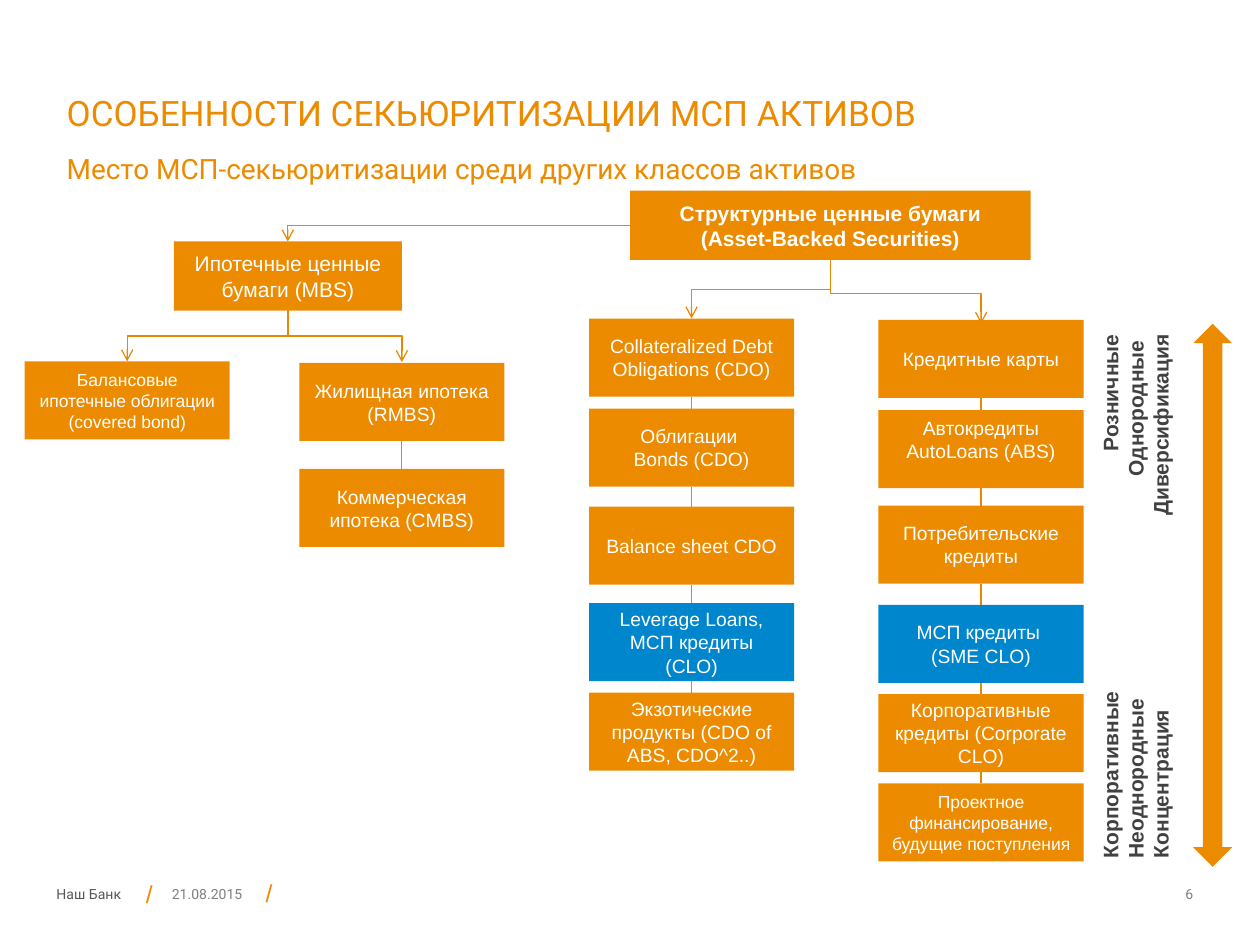
import pptx
import pptx.util
import pptx.dml.color
import pptx.enum.shapes
import pptx.enum.text
import pptx.oxml
import pptx.oxml.ns

Pt = pptx.util.Pt
qn = pptx.oxml.ns.qn
color = pptx.dml.color.RGBColor.from_string
Shape = pptx.enum.shapes.MSO_SHAPE
Connector = pptx.enum.shapes.MSO_CONNECTOR
Align = pptx.enum.text.PP_ALIGN
Anchor = pptx.enum.text.MSO_ANCHOR

ORANGE, BLUE, WHITE, DARK, GRAY = "ED8B00", "0086CD", "FFFFFF", "414141", "7F7F7F"
LINE = "E88800"
BOX_W, BOX_H = 117.2, 44.6
HEAD_H = 39.6

deck = pptx.Presentation()
deck.slide_width, deck.slide_height = Pt(720), Pt(540)
slide = deck.slides.add_slide(deck.slide_layouts[6])
shapes = slide.shapes


def write(target, text, size, ink, font="Arial", bold=False, align=Align.LEFT, anchor=Anchor.TOP):
    frame = target.text_frame
    frame.text = text
    frame.word_wrap = True
    frame.vertical_anchor = anchor
    for paragraph in frame.paragraphs:
        paragraph.alignment = align
        for run in paragraph.runs:
            run.font.name = font
            run.font.size = Pt(size)
            run.font.bold = bold
            run.font.color.rgb = color(ink)


def link(kind, x1, y1, x2, y2, arrow=False):
    connector = shapes.add_connector(kind, Pt(x1), Pt(y1), Pt(x2), Pt(y2))
    connector.line.color.rgb = color(LINE)
    connector.line.width = Pt(0.75)
    properties = connector._element.spPr
    if arrow:
        tail = pptx.oxml.parse_xml(
            '<a:tailEnd xmlns:a="http://schemas.openxmlformats.org/drawingml/2006/main" type="arrow"/>')
        connector.line._get_or_add_ln().append(tail)
    properties.append(properties.makeelement(qn("a:effectLst"), {}))
    return properties


labels = [
    (25.2, 502.4, 96.5, 17.3, "Наш Банк", 8, "575757", "Roboto", Align.LEFT, Anchor.MIDDLE),
    (76.3, 499, 15.8, 24.5, "/", 14, ORANGE, "Arial", Align.LEFT, Anchor.TOP),
    (144.7, 498.2, 15.8, 24.5, "/", 14, ORANGE, "Arial", Align.LEFT, Anchor.TOP),
    (84.2, 502.4, 68.4, 17.3, "21.08.2015", 8, GRAY, "Roboto", Align.CENTER, Anchor.MIDDLE),
    (626.4, 502.4, 62.6, 17.3, "6", 8, GRAY, "Roboto", Align.RIGHT, Anchor.MIDDLE),
    (31, 82.8, 658, 23, "Место МСП-секьюритизации среди других классов активов",
     16, ORANGE, "Roboto", Align.LEFT, Anchor.TOP),
    (31, 49, 658, 56.9, "ОСОБЕННОСТИ СЕКЬЮРИТИЗАЦИИ МСП АКТИВОВ",
     20, ORANGE, "Roboto", Align.LEFT, Anchor.TOP),
]
for x, y, w, h, text, size, ink, font, align, anchor in labels:
    label = shapes.add_textbox(Pt(x), Pt(y), Pt(w), Pt(h))
    write(label, text, size, ink, font, align=align, anchor=anchor)

scale = shapes.add_shape(Shape.UP_DOWN_ARROW, Pt(681.8), Pt(185), Pt(22.3), Pt(310.3))
scale.shadow.inherit = False
scale.fill.solid()
scale.fill.fore_color.rgb = color(ORANGE)
scale.line.fill.background()

for y, h, text, align in [
    (184.1, 128.9, "Розничные\nОднородные \nДиверсификация", Align.RIGHT),
    (385.5, 112, "Корпоративные\nНеоднородные Концентрация", Align.LEFT),
]:
    trait = shapes.add_textbox(Pt(623.5), Pt(y), Pt(58.3), Pt(h))
    write(trait, text, 12, DARK, bold=True, align=align)
    trait.text_frame._txBody.bodyPr.set("vert", "vert270")

boxes = [
    (360, 109, 229, HEAD_H, "Структурные ценные бумаги (Asset-Backed Securities)", 12, ORANGE),
    (99.4, 138, 130.3, HEAD_H, "Ипотечные ценные бумаги (MBS)", 12, ORANGE),
]
columns = [
    (14.1, [(206.5, "Балансовые ипотечные облигации (covered bond)", 10, ORANGE)]),
    (171, [
        (207.4, "Жилищная ипотека (RMBS)", 11, ORANGE),
        (268, "Коммерческая ипотека (СMBS)", 11, ORANGE),
    ]),
    (336.6, [
        (182, "Collateralized Debt Obligations (CDO)", 11, ORANGE),
        (233.5, "Облигации \nBonds (CDO)", 11, ORANGE),
        (289.5, "Balance sheet CDO", 11, ORANGE),
        (344.7, "Leverage Loans, МСП кредиты (CLO)", 11, BLUE),
        (395.8, "Экзотические продукты (CDO of ABS, CDO^2..)", 11, ORANGE),
    ]),
    (502, [
        (182.8, "Кредитные карты", 11, ORANGE),
        (234.3, "Автокредиты\nAutoLoans (ABS)", 11, ORANGE),
        (288.9, "Потребительские кредиты", 11, ORANGE),
        (345.6, "МСП кредиты \v(SME CLO)", 11, BLUE),
        (396.6, "Корпоративные кредиты (Corporate CLO)", 11, ORANGE),
        (447.6, "Проектное финансирование, будущие поступления ", 10, ORANGE),
    ]),
]
for x, members in columns:
    boxes += [(x, y, BOX_W, BOX_H, text, size, fill) for y, text, size, fill in members]

for x, y, w, h, text, size, fill in boxes:
    box = shapes.add_shape(Shape.RECTANGLE, Pt(x), Pt(y), Pt(w), Pt(h))
    box.shadow.inherit = False
    box.fill.solid()
    box.fill.fore_color.rgb = color(fill)
    box.line.fill.background()
    anchor = Anchor.TOP if "AutoLoans" in text else Anchor.MIDDLE
    write(box, text, size, WHITE, bold="Asset-Backed" in text, align=Align.CENTER, anchor=anchor)

for x, members in columns:
    middle = x + BOX_W / 2
    for upper, lower in zip(members, members[1:]):
        link(Connector.STRAIGHT, middle, upper[0] + BOX_H, middle, lower[0])

to_mortgage = link(Connector.ELBOW, 360, 128.9, 164.5, 138, arrow=True)
to_mortgage.find(qn("a:prstGeom")).set("prst", "bentConnector2")

for x1, y1, x2, y2 in [
    (474.5, 148.6, 395.2, 182),
    (474.5, 150.5, 560.6, 185),
    (164.5, 177.6, 72.7, 206.5),
    (164.5, 177.1, 229.6, 206.9),
]:
    center_x, center_y = (x1 + x2) / 2, (y1 + y2) / 2
    half_w, half_h = (y2 - y1) / 2, abs(x2 - x1) / 2
    side = 1 if x2 > x1 else -1
    branch = link(Connector.ELBOW, center_x + side * half_w, center_y - half_h,
                  center_x - side * half_w, center_y + half_h, arrow=True)
    branch.find(qn("a:xfrm")).set("rot", "16200000" if side > 0 else "5400000")

deck.save("out.pptx")
